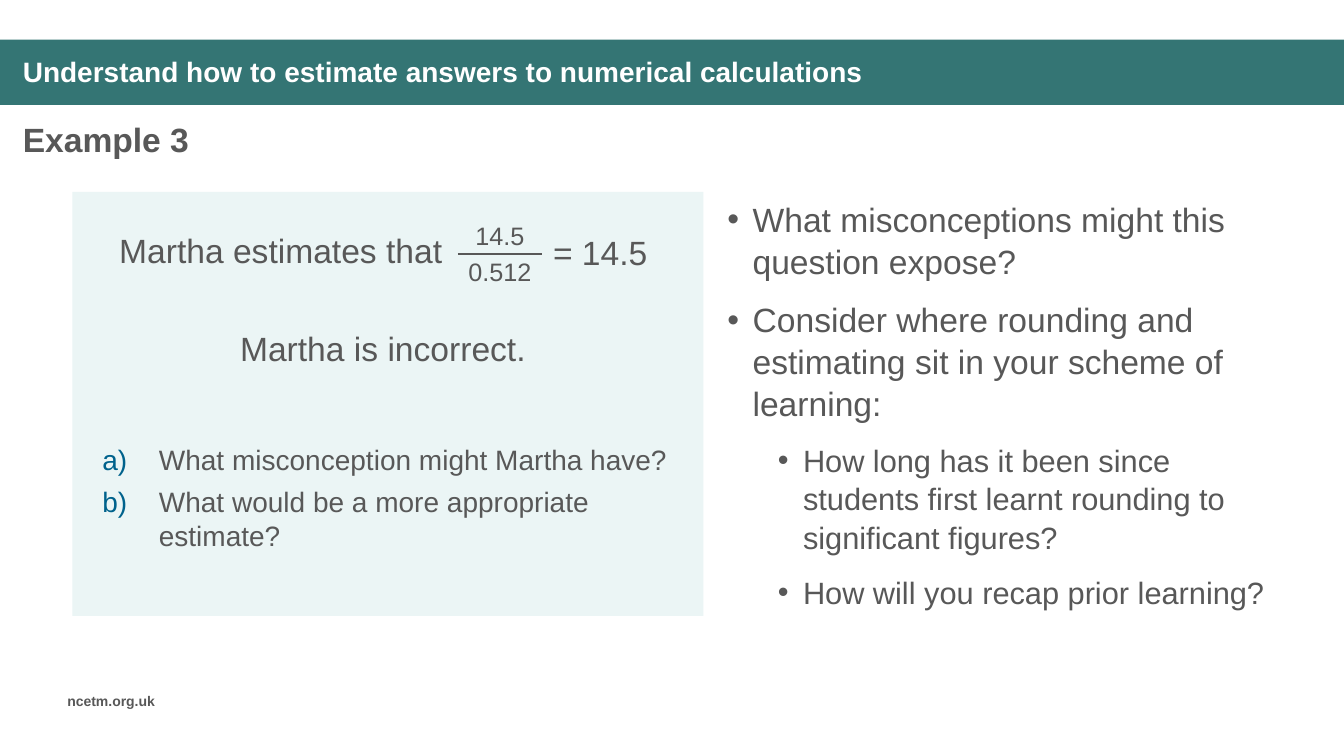
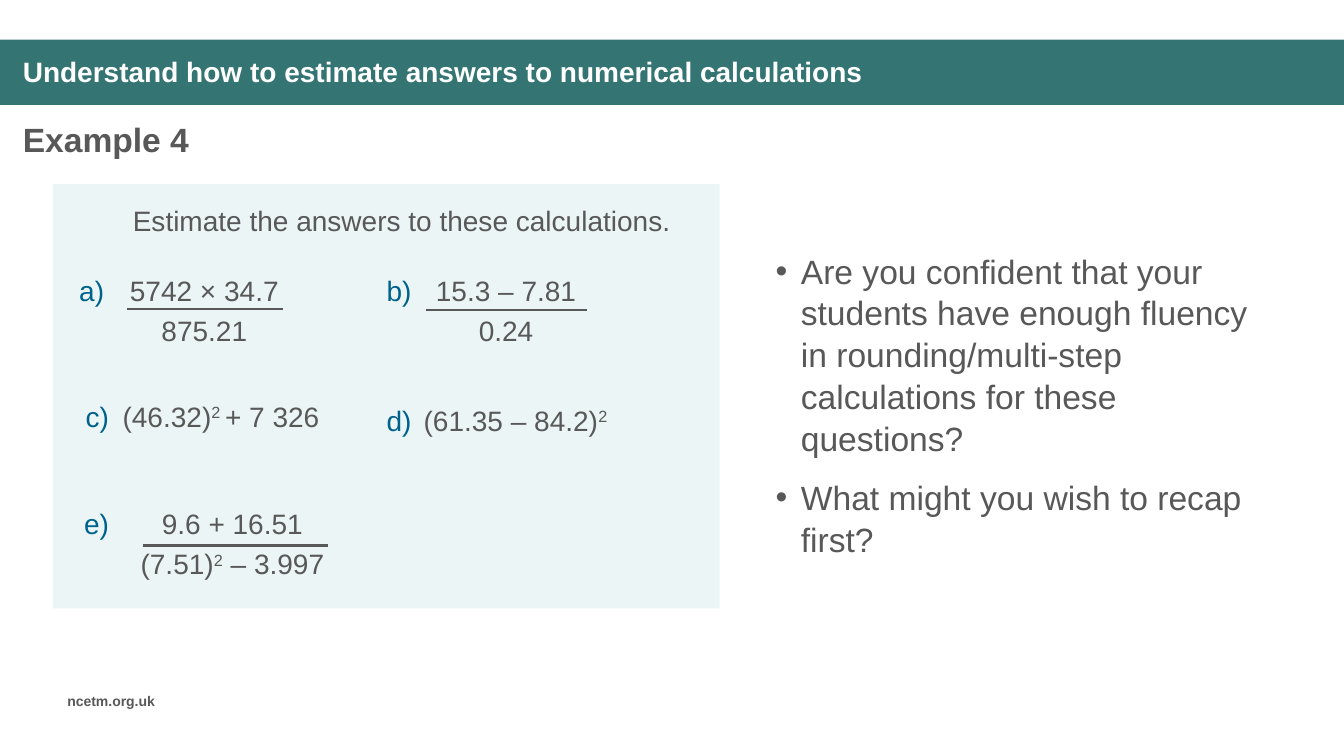
from lxml.etree import SubElement
from pptx import Presentation
from pptx.dml.color import RGBColor
from pptx.enum.shapes import MSO_CONNECTOR as Connector, MSO_SHAPE as Shape
from pptx.enum.text import MSO_ANCHOR as Anchor, PP_ALIGN as Align
from pptx.oxml.ns import qn
from pptx.util import Pt

WIDTH, HEIGHT = 960, 540
TEAL, PALE, GREY, BLUE, WHITE = "347574", "EBF5F5", "585858", "00628C", "FFFFFF"
FONT = "Arial"
TITLE = "Understand how to estimate answers to numerical calculations"


def rgb(color):
    return RGBColor.from_string(color)


def points(*lengths):
    return [Pt(length) for length in lengths]


def add_block(page, area, color):
    block = page.shapes.add_shape(Shape.RECTANGLE, *points(*area))
    block.shadow.inherit = False
    block.fill.solid()
    block.fill.fore_color.rgb = rgb(color)
    block.line.fill.background()


def add_rule(page, left, top, width):
    rule = page.shapes.add_connector(
        Connector.STRAIGHT, *points(left, top, left + width, top))
    rule.line.color.rgb = rgb(GREY)
    rule.line.width = Pt(1.5)
    SubElement(rule._element.spPr, qn("a:effectLst"))


def add_frame(page, area, anchor=Anchor.TOP, wrap=True):
    frame = page.shapes.add_textbox(*points(*area)).text_frame
    frame.word_wrap = wrap
    frame.vertical_anchor = anchor
    return frame


def add_paragraph(frame, index):
    return frame.add_paragraph() if index else frame.paragraphs[0]


def add_spans(para, text, size, color=GREY, bold=False):
    """Add the text as runs; parts between bars are superscript."""
    for index, part in enumerate(text.split("|")):
        if not part:
            continue
        span = para.add_run()
        span.text = part
        span.font.name = FONT
        span.font.size = Pt(size)
        span.font.bold = bold
        span.font.color.rgb = rgb(color)
        if index % 2:
            span._r.get_or_add_rPr().set("baseline", "30000")


def add_line(page, area, text, size, color=GREY, bold=False,
             align=Align.LEFT, anchor=Anchor.TOP, wrap=True):
    para = add_frame(page, area, anchor, wrap).paragraphs[0]
    para.alignment = align
    add_spans(para, text, size, color, bold)
    return para


def add_fraction(page, numerator, denominator, area, rule, size=20):
    frame = add_frame(page, area, wrap=False)
    for index, text in enumerate((numerator, denominator)):
        para = add_paragraph(frame, index)
        para.alignment = Align.CENTER
        if index:
            para.space_before = Pt(0.23 * size)
        add_spans(para, text, size)
    add_rule(page, *rule)


def set_marker(para, margin, hang, tag, **attributes):
    """Give the paragraph a hanging bullet or number."""
    properties = para._p.get_or_add_pPr()
    properties.set("marL", str(Pt(margin)))
    properties.set("indent", str(-Pt(hang)))
    color = BLUE if tag == "a:buAutoNum" else GREY
    holder = SubElement(properties, qn("a:buClr"))
    SubElement(holder, qn("a:srgbClr"), val=color)
    SubElement(properties, qn("a:buFont"), typeface=FONT)
    SubElement(properties, qn(tag), **attributes)


def add_bullets(page, area, items):
    """Add (level, text) items as a two-level list."""
    frame = add_frame(page, area, Anchor.MIDDLE)
    for index, (level, text) in enumerate(items):
        para = add_paragraph(frame, index)
        set_marker(para, 28 + 36 * level, 18, "a:buChar", char="•")
        para.line_spacing = 1.04
        para.space_after = Pt(12)
        add_spans(para, text, 24 - 2 * level)


def add_questions(page, area, questions):
    """Add a lettered list."""
    frame = add_frame(page, area)
    for index, text in enumerate(questions):
        para = add_paragraph(frame, index)
        set_marker(para, 40.4, 40.4, "a:buAutoNum", type="alphaLcParenR")
        para.space_after = Pt(6)
        add_spans(para, text, 20)


def add_page(deck, heading):
    page = deck.slides.add_slide(deck.slide_layouts[6])
    add_block(page, (0, 28.3, WIDTH, 46.7), TEAL)
    add_line(page, (41, 491, 87, 19.5), "ncetm.org.uk", 10, bold=True)
    title = add_line(page, (9.2, 35.3, 834, 34), TITLE, 20, WHITE, True,
                     anchor=Anchor.MIDDLE)
    title.line_spacing = 0.9
    add_line(page, (9.2, 81.4, 272, 36), heading, 24, bold=True)
    return page


def add_misconception_page(deck):
    page = add_page(deck, "Example 3")
    add_block(page, (51.8, 137, 450.7, 303), PALE)
    add_line(page, (78, 160.5, 250, 36), "Martha estimates that", 24)
    add_fraction(page, "14.5", "0.512", (327, 154, 60, 55.5),
                 (327, 181.5, 60), size=18)
    add_line(page, (388, 162, 83, 36), "= 14.5", 24, wrap=False)
    add_line(page, (133.5, 230.5, 280, 36), "Martha is incorrect.", 24,
             align=Align.CENTER)
    add_questions(page, (66, 312.5, 423, 86), [
        "What misconception might Martha have?",
        "What would be a more appropriate estimate?"])
    add_bullets(page, (502.5, 137, 420, 303), [
        (0, "What misconceptions might this question expose?"),
        (0, "Consider where rounding and estimating sit in your scheme "
            "of learning:"),
        (1, "How long has it been since students first learnt rounding to "
            "significant figures?"),
        (1, "How will you recap prior learning?")])


def add_calculations_page(deck):
    page = add_page(deck, "Example 4")
    add_block(page, (37.7, 131.5, 476.3, 303), PALE)
    add_line(page, (87.8, 142, 402, 31.5),
             "Estimate the answers to these calculations.", 20, wrap=False)
    labels = [("a)", 49.5, 191.5), ("b)", 269, 191.5), ("c)", 54, 281.5),
              ("d)", 269, 284.5), ("e)", 53, 358)]
    for letter, left, top in labels:
        add_line(page, (left, top, 57, 31.5), letter, 20, BLUE)
    fractions = [
        ("5742 × 34.7", "875.21", (85, 191.5, 122, 60.5), (91, 220.8, 111)),
        ("15.3 – 7.81", "0.24", (304, 191.5, 115, 60.5), (304, 221.5, 115)),
        ("9.6 + 16.51", "(7.51)|2| – 3.997", (92, 358.5, 148, 60.5),
         (102, 389.7, 132))]
    for fraction in fractions:
        add_fraction(page, *fraction)
    add_line(page, (80.5, 281.5, 158, 31.5), "(46.32)|2 |+ 7 326", 20,
             wrap=False)
    add_line(page, (295.5, 284.5, 148, 31.5), "(61.35 – 84.2)|2|", 20,
             wrap=False)
    add_bullets(page, (537, 137, 385, 303), [
        (0, "Are you confident that your students have enough fluency in "
            "rounding/multi-step calculations for these questions?"),
        (0, "What might you wish to recap first?")])


def main():
    deck = Presentation()
    deck.slide_width, deck.slide_height = points(WIDTH, HEIGHT)
    add_misconception_page(deck)
    add_calculations_page(deck)
    deck.save("out.pptx")


if __name__ == "__main__":
    main()
